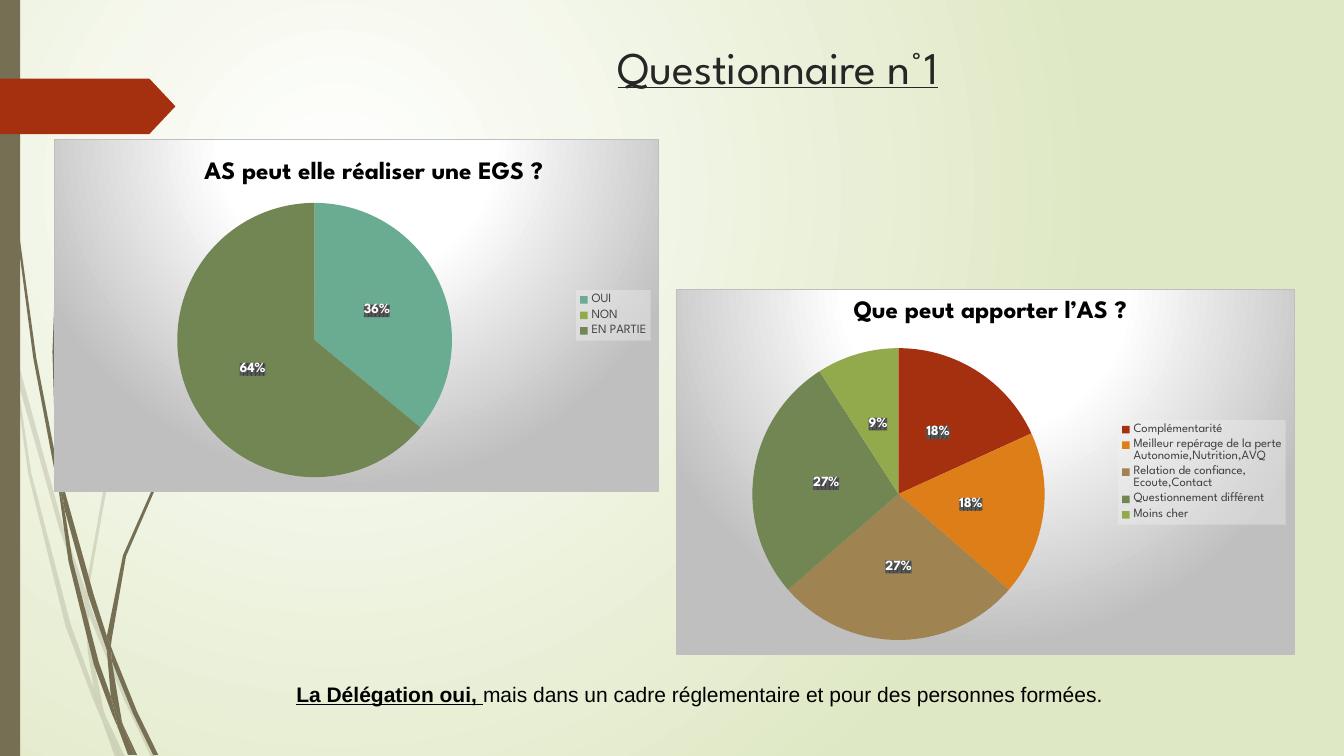
from lxml.etree import fromstring
from pptx import Presentation
from pptx.chart.data import CategoryChartData
from pptx.dml.color import RGBColor
from pptx.enum.chart import XL_CHART_TYPE as Kind, XL_LABEL_POSITION as Spot, XL_LEGEND_POSITION as Side
from pptx.enum.shapes import MSO_SHAPE as Form
from pptx.enum.text import MSO_ANCHOR as Anchor, PP_ALIGN as Align
from pptx.oxml.ns import nsdecls, qn
from pptx.util import Pt

SCALE = 9144  # EMU per px, 100 px to the inch
FACE = "League Spartan"
BROWN, RED = "766F54", "A53010"
OLIVE, LIME, TEAL = "728653", "92AA4C", "6AAC91"

# Outlines of the grass blades, piece by piece
PALE = [
    [(11, 350), (9, 322), (0, 282), (0, 299), (10, 344)],
    [(58, 522), (84, 599), (85, 586), (62, 520), (14, 345), (17, 376)],
    [(92, 607), (88, 596), (88, 610), (123, 694), (150, 751), (155, 751), (127, 692)],
    [(119, 751), (124, 751), (105, 711)],
    [(93, 683), (70, 619), (31, 469), (17, 376), (11, 350), (28, 470), (65, 621), (92, 693),
     (101, 714), (99, 707)],
    [(84, 599), (87, 646), (93, 683), (96, 692), (105, 711), (103, 706), (91, 646), (88, 610),
     (88, 608)],
    [(88, 584), (110, 462), (160, 349), (229, 245), (268, 198), (290, 175), (312, 154),
     (312, 153), (289, 175), (268, 197), (228, 244), (158, 348), (107, 461), (85, 584),
     (85, 586), (88, 596)],
    [(101, 714), (114, 751), (119, 751)],
    [(88, 608), (88, 610), (88, 596), (85, 586), (84, 599)],
    [(96, 692), (93, 683), (99, 707), (101, 714), (119, 751), (105, 711)],
]
DARK = [
    [(7, 110), (17, 233), (33, 355), (56, 477), (57, 481), (55, 457), (55, 453), (36, 355),
     (19, 232), (8, 109), (5, 48), (4, 0), (3, 0), (4, 48)],
    [(88, 592), (106, 645), (106, 631), (93, 590), (60, 472), (64, 505)],
    [(113, 649), (110, 641), (111, 656), (132, 708), (152, 749), (157, 749), (136, 706)],
    [(110, 691), (98, 657), (72, 556), (64, 505), (57, 477), (68, 557), (93, 659), (111, 708),
     (117, 722), (116, 717)],
    [(60, 472), (58, 453), (54, 349), (58, 245), (63, 193), (70, 141), (62, 193), (56, 245),
     (52, 349), (55, 449)],
    [(133, 749), (136, 749), (122, 719)],
    [(57, 477), (64, 505), (60, 472), (55, 449), (55, 453)],
    [(111, 633), (125, 552), (158, 476), (205, 406), (231, 374), (245, 359), (261, 344),
     (260, 344), (245, 358), (231, 373), (204, 405), (156, 474), (122, 551), (106, 631),
     (110, 641)],
    [(117, 722), (127, 749), (131, 749)],
    [(106, 645), (110, 691), (116, 706), (122, 719), (121, 716), (111, 656), (109, 651)],
    [(106, 645), (109, 651), (111, 656), (110, 641), (106, 631)],
    [(116, 706), (110, 691), (116, 717), (117, 722), (130, 749), (133, 749), (122, 719)],
]


def px(*vals):
    return [round(v * SCALE) for v in vals]


def rgb(code):
    return RGBColor.from_string(code)


def style(font, color="000000", **fmt):
    fmt = {"name": FACE, **fmt}
    for key, val in fmt.items():
        setattr(font, key, Pt(val) if key == "size" else val)
    font.color.rgb = rgb(color)


def paint(shape, color):
    shape.shadow.inherit = False
    shape.fill.solid()
    shape.fill.fore_color.rgb = rgb(color)
    shape.line.fill.background()


def glow(stops, focus):
    """Round gradient as XML; focus is left, top, right, bottom in percent."""
    marks = "".join(f'<a:gs pos="{at * 1000}"><a:srgbClr val="{c}"/></a:gs>' for at, c in stops)
    rect = " ".join(f'{side}="{val * 1000}"' for side, val in zip("ltrb", focus))
    return (f'<a:gradFill {nsdecls("a")} rotWithShape="1"><a:gsLst>{marks}</a:gsLst>'
            f'<a:path path="circle"><a:fillToRect {rect}/></a:path></a:gradFill>')


def chart_xml(body):
    """Chart element from the inner part of its tag."""
    tag = body.split()[0]
    return fromstring(f'<c:{tag} {nsdecls("c", "a")}>{body[len(tag):]}</c:{tag}>')


def place(node, after=None, **at):
    """Fix a chart part by fractions of the chart's size."""
    old = node.find(qn("c:layout"))
    if old is not None:
        node.remove(old)
    modes = "".join(f'<c:{k}Mode val="edge"/>' for k in at if k in "xy")
    sizes = "".join(f'<c:{k} val="{v}"/>' for k, v in at.items())
    inner = '<c:layoutTarget val="inner"/>' if "w" in at else ""
    layout = chart_xml(f"layout <c:manualLayout>{inner}{modes}{sizes}</c:manualLayout>")
    if after is None:
        node.insert(0, layout)
    else:
        after.addnext(layout)


def blade(slide, dots, alpha=100):
    pen = slide.shapes.build_freeform(*dots[0], scale=SCALE)
    pen.add_line_segments(dots[1:], close=True)
    shape = pen.convert_to_shape()
    paint(shape, BROWN)
    if alpha < 100:
        tint = shape.fill._xPr.find(".//" + qn("a:srgbClr"))
        tint.append(fromstring(f'<a:alpha {nsdecls("a")} val="{alpha * 1000}"/>'))


def block(slide, form, box, color):
    shape = slide.shapes.add_shape(form, *px(*box))
    paint(shape, color)
    return shape


def text(slide, box, runs, align=Align.LEFT):
    frame = slide.shapes.add_textbox(*px(*box)).text_frame
    frame.word_wrap = True
    frame.vertical_anchor = Anchor.TOP
    para = frame.paragraphs[0]
    para.alignment = align
    for words, fmt in runs:
        run = para.add_run()
        run.text = words
        style(run.font, **fmt)


def pie(slide, box, title, parts, head, plot):
    """Pie with percent labels; parts are name, value, colour."""
    data = CategoryChartData()
    data.categories = [name for name, _, _ in parts]
    data.add_series("Series 1", [val for _, val, _ in parts])
    chart = slide.shapes.add_chart(Kind.PIE, *px(*box), data).chart
    style(chart.font, size=10)

    chart.has_title = True
    chart.chart_title.include_in_layout = False
    frame = chart.chart_title.text_frame
    frame.text = title
    style(frame.paragraphs[0].runs[0].font, size=18, bold=True)
    node = chart.chart_title._element
    place(node, node.find(qn("c:tx")), **dict(zip("xy", head)))

    chart.has_legend = True
    legend = chart.legend
    legend.position = Side.RIGHT
    legend.include_in_layout = False
    style(legend.font, "404040", size=9)
    legend._element.find(qn("c:txPr")).addprevious(chart_xml(
        'spPr <a:solidFill><a:srgbClr val="F2F2F2"><a:alpha val="39000"/></a:srgbClr></a:solidFill>'))

    rings = chart.plots[0]
    rings.vary_by_categories = True
    series = rings.series[0]
    labels = series.data_labels
    for key, val in {"show_percentage": True, "show_value": False, "number_format": "0%",
                     "number_format_is_linked": False, "position": Spot.CENTER}.items():
        setattr(labels, key, val)
    style(labels.font, "FFFFFF", size=10, bold=True)
    labels._element.find(qn("c:txPr")).addprevious(chart_xml(
        'spPr <a:pattFill prst="pct75"><a:fgClr><a:srgbClr val="404040"/></a:fgClr>'
        '<a:bgClr><a:srgbClr val="595959"/></a:bgClr></a:pattFill>'))
    for i, (_, val, color) in enumerate(parts):
        fill = series.points[i].format.fill
        fill.solid()
        fill.fore_color.rgb = rgb(color)
        if not val:
            labels._element.insert(0, chart_xml(f'dLbl <c:idx val="{i}"/><c:delete val="1"/>'))

    root = chart._chartSpace.find(qn("c:chart"))
    place(root.find(qn("c:plotArea")), **dict(zip("xywh", plot)))
    back = glow([(0, "FFFFFF"), (39, "FFFFFF"), (100, "BFBFBF")], (50, -80, 50, 180))
    root.addnext(chart_xml(f'spPr {back}<a:ln w="9525"><a:solidFill><a:srgbClr val="BFBFBF"/>'
                           '</a:solidFill></a:ln>'))


def main():
    deck = Presentation()
    deck.slide_width, deck.slide_height = px(1333, 750)
    slide = deck.slides.add_slide(deck.slide_layouts[6])
    slide.background.fill.solid()
    solid = slide._element.find(".//" + qn("p:bgPr")).find(qn("a:solidFill"))
    solid.getparent().replace(solid, fromstring(
        glow([(0, "FFFFFF"), (100, "DFE8C4")], (50, 50, 100, 100))))

    for dots in PALE:
        blade(slide, dots, alpha=20)
    for dots in DARK:
        blade(slide, dots)
    block(slide, Form.RECTANGLE, (0, 0, 20, 750), BROWN)
    block(slide, Form.PENTAGON, (0, 78, 174, 55), RED).adjustments[0] = 0.47

    text(slide, (284, 34, 975, 104),
         [("Questionnaire n°1", {"size": 32.4, "color": "262626", "underline": True})],
         Align.CENTER)
    pie(slide, (54, 138, 600, 350), "AS peut elle réaliser une EGS ?",
        [("OUI", 36, TEAL), ("NON", 0, LIME), ("EN PARTIE", 64, OLIVE)],
        (0.24, 0.04), (0.2, 0.18, 0.46, 0.78))
    pie(slide, (670, 287, 614, 363), "Que peut apporter l’AS ?",
        [("Complémentarité", 18, RED),
         ("Meilleur repérage de la perte Autonomie,Nutrition,AVQ", 18, "DE7E18"),
         ("Relation de confiance, Ecoute,Contact", 27, "9F8351"),
         ("Questionnement différent", 27, OLIVE), ("Moins cher", 9, LIME)],
        (0.28, 0.01), (0.12, 0.16, 0.48, 0.8))
    plain = {"name": "Arial", "size": 15}
    text(slide, (284, 671, 899, 35),
         [("La Délégation oui, ", {**plain, "bold": True, "underline": True}),
          ("mais dans un cadre réglementaire et pour des personnes formées.", plain)])
    deck.save("out.pptx")


if __name__ == "__main__":
    main()
